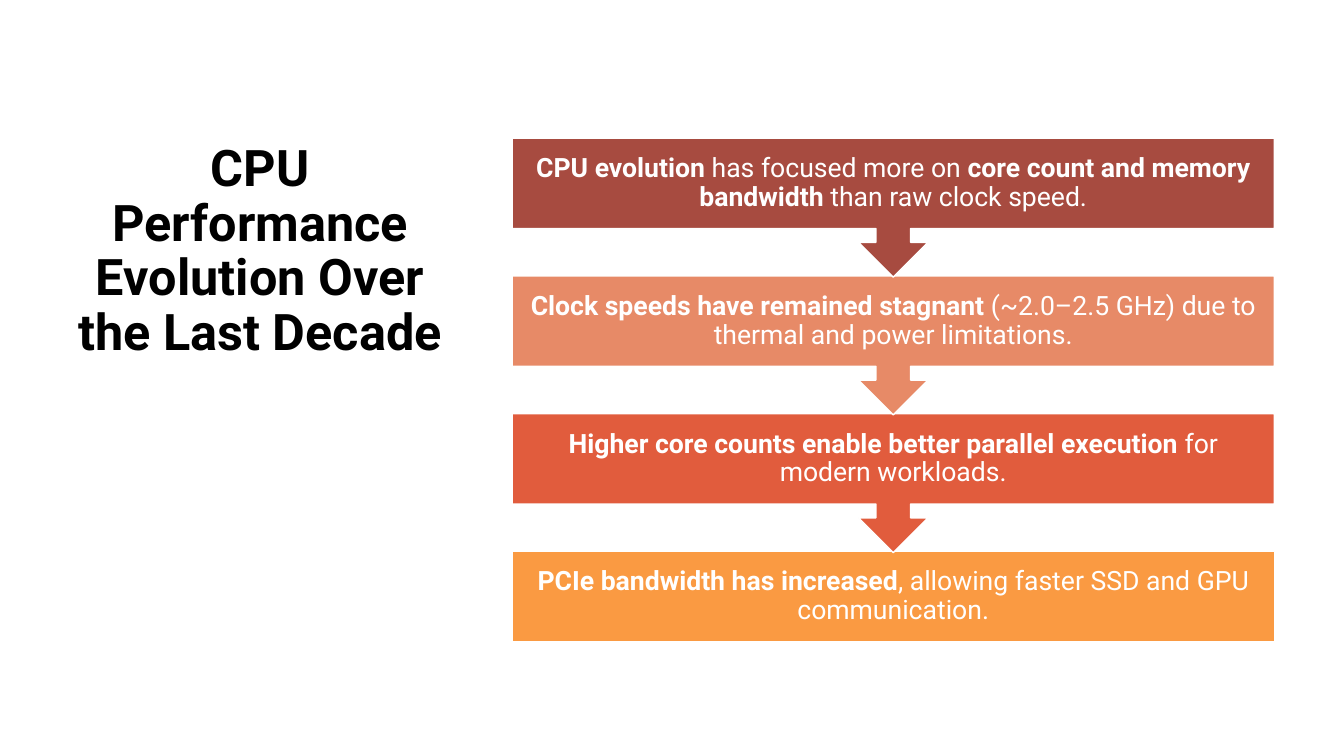
from dataclasses import dataclass

from pptx import Presentation
from pptx.dml.color import RGBColor
from pptx.enum.shapes import MSO_SHAPE as Preset
from pptx.enum.text import MSO_ANCHOR as Anchor, MSO_AUTO_SIZE as AutoSize, PP_ALIGN as Align
from pptx.slide import Slide
from pptx.text.text import TextFrame
from pptx.util import Inches, Pt

FONT = "Roboto"
WHITE, BLACK = "FFFFFF", "000000"

# Slide and flow grid, in inches
SLIDE_WIDTH, SLIDE_HEIGHT = 13.33, 7.5
TOP, CONTENT_HEIGHT = 1.37, 5.0
TITLE_LEFT, TITLE_WIDTH = 0.67, 3.82
FLOW_LEFT, FLOW_WIDTH = 5.08, 7.56
BOX_HEIGHT, CALLOUT_HEIGHT = 0.9, 1.38
TEXT_INSET = 0.15


@dataclass(frozen=True)
class Phrase:
    text: str
    bold: bool = False


@dataclass(frozen=True)
class Step:
    fill: str
    phrases: tuple[Phrase, ...]


STEPS = (
    Step("A74B40", (
        Phrase("CPU evolution", True),
        Phrase(" has focused more on "),
        Phrase("core count and memory bandwidth", True),
        Phrase(" than raw clock speed."),
    )),
    Step("E78A67", (
        Phrase("Clock speeds have remained stagnant", True),
        Phrase(" (~2.0–2.5 GHz) due to thermal and power limitations."),
    )),
    Step("E15C3D", (
        Phrase("Higher core counts enable better parallel execution", True),
        Phrase(" for modern workloads."),
    )),
    Step("FA9A42", (
        Phrase("PCIe bandwidth has increased", True),
        Phrase(", allowing faster SSD and GPU communication."),
    )),
)
ROW_PITCH = (CONTENT_HEIGHT - BOX_HEIGHT) / (len(STEPS) - 1)


def color(hex_value: str) -> RGBColor:
    return RGBColor.from_string(hex_value)


def write_phrases(
    frame: TextFrame, phrases: tuple[Phrase, ...], size: float, hex_value: str
) -> None:
    """Fill a frame with one centred paragraph of plain and bold runs."""
    frame.word_wrap = True
    frame.auto_size = AutoSize.NONE
    paragraph = frame.paragraphs[0]
    paragraph.alignment = Align.CENTER
    paragraph.line_spacing = 0.9
    for phrase in phrases:
        run = paragraph.add_run()
        run.text = phrase.text
        run.font.name = FONT
        run.font.size = Pt(size)
        run.font.bold = phrase.bold
        run.font.color.rgb = color(hex_value)


def add_title(slide: Slide, text: str) -> None:
    title = slide.shapes.title
    title.left, title.top = Inches(TITLE_LEFT), Inches(TOP)
    title.width, title.height = Inches(TITLE_WIDTH), Inches(CONTENT_HEIGHT)
    title.text_frame.vertical_anchor = Anchor.TOP
    write_phrases(title.text_frame, (Phrase(text, True),), 36, BLACK)


def add_step(slide: Slide, row: int, step: Step) -> None:
    """Draw a box that points to the next row, or a plain box in the last row."""
    is_last = row == len(STEPS) - 1
    shape = slide.shapes.add_shape(
        Preset.RECTANGLE if is_last else Preset.DOWN_ARROW_CALLOUT,
        Inches(FLOW_LEFT), Inches(TOP + row * ROW_PITCH),
        Inches(FLOW_WIDTH), Inches(BOX_HEIGHT if is_last else CALLOUT_HEIGHT),
    )
    shape.shadow.inherit = False
    shape.fill.solid()
    shape.fill.fore_color.rgb = color(step.fill)
    shape.line.color.rgb = color(WHITE)
    shape.line.width = Pt(1)

    frame = shape.text_frame
    frame.vertical_anchor = Anchor.MIDDLE
    frame.margin_left = frame.margin_right = Inches(TEXT_INSET)
    frame.margin_top = frame.margin_bottom = Inches(TEXT_INSET)
    write_phrases(frame, step.phrases, 19, WHITE)


def main() -> None:
    presentation = Presentation()
    presentation.slide_width = Inches(SLIDE_WIDTH)
    presentation.slide_height = Inches(SLIDE_HEIGHT)
    slide = presentation.slides.add_slide(presentation.slide_layouts[5])
    slide.background.fill.solid()
    slide.background.fill.fore_color.rgb = color(WHITE)

    add_title(slide, "CPU Performance Evolution Over the Last Decade")
    # Bottom row first, so that each arrow tip lies over the box below it
    for row, step in reversed(tuple(enumerate(STEPS))):
        add_step(slide, row, step)

    presentation.save("out.pptx")


if __name__ == "__main__":
    main()
